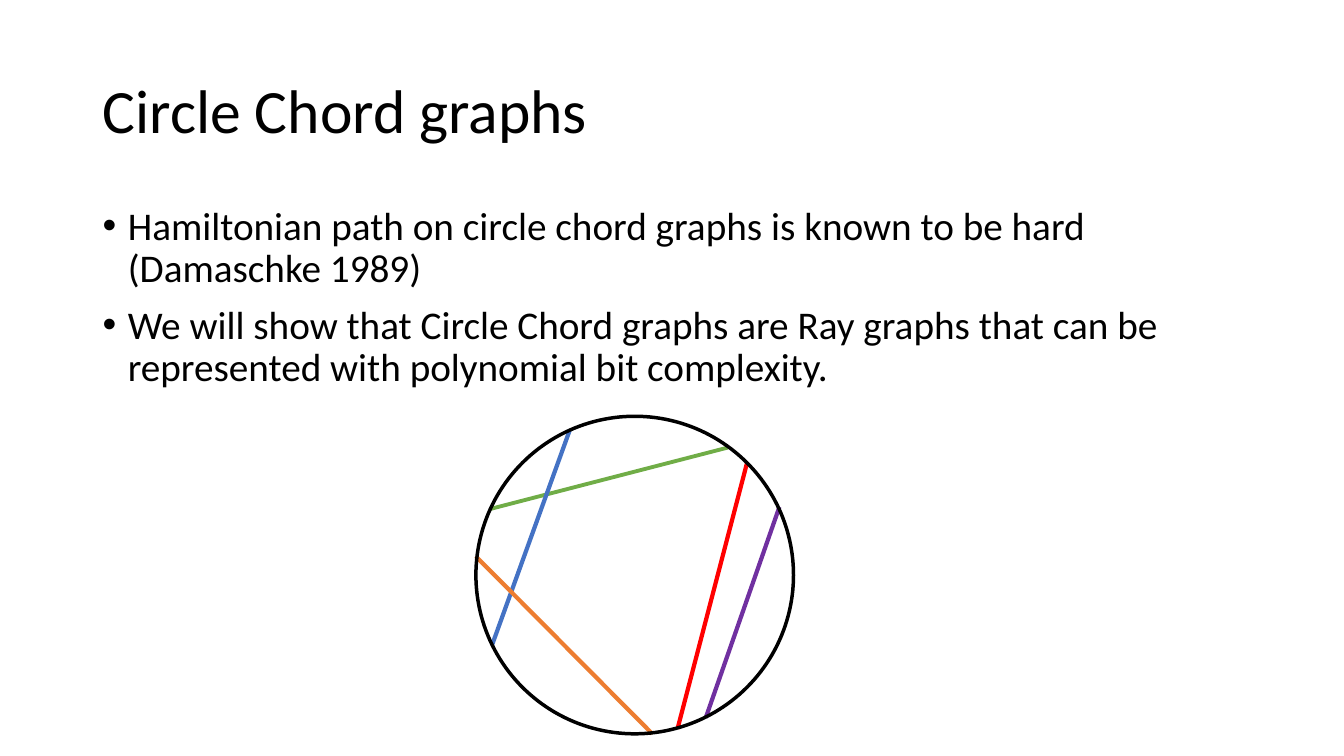
from lxml import etree
from pptx import Presentation
from pptx.dml.color import RGBColor
from pptx.enum.shapes import MSO_CONNECTOR, MSO_SHAPE
from pptx.enum.text import MSO_ANCHOR
from pptx.oxml.ns import qn
from pptx.util import Pt

STRAIGHT = MSO_CONNECTOR.STRAIGHT
OVAL = MSO_SHAPE.OVAL
TOP, MIDDLE = MSO_ANCHOR.TOP, MSO_ANCHOR.MIDDLE

TITLE = "Circle Chord graphs"
POINTS = [
    "Hamiltonian path on circle chord graphs is known to be hard (Damaschke 1989)",
    "We will show that Circle Chord graphs are Ray graphs that can be "
    "represented with polynomial bit complexity.",
]
CHORDS = [
    ("green", 2.75, (486, 505), (722, 444)),
    ("blue", 3, (565, 427), (488, 640)),
    ("orange", 3, (472, 552), (647, 728)),
    ("red", 3, (741, 459), (672, 723)),
    ("purple", 3, (773, 503), (700, 712)),
]
CIRCLE = (472, 413, 315, 315)
TITLE_BOX = (92, 40, 1150, 145)
BODY_BOX = (92, 200, 1150, 476)
INDENT = 25

THEME = {
    "font": "Calibri",
    "title": 44,
    "body": 28,
    "outline": 2.5,
    "black": "000000",
    "green": "70AD47",
    "blue": "4472C4",
    "orange": "ED7D31",
    "red": "FF0000",
    "purple": "7030A0",
}
EMU_PER_PX = 9144


def px(*values):
    return [v * EMU_PER_PX for v in values]


def color(name):
    return RGBColor.from_string(THEME[name])


def add_bullet(p):
    pPr = p._p.get_or_add_pPr()
    indent = INDENT * EMU_PER_PX
    pPr.set("marL", str(indent))
    pPr.set("indent", str(-indent))
    etree.SubElement(pPr, qn("a:buFont")).set("typeface", "Arial")
    etree.SubElement(pPr, qn("a:buChar")).set("char", "•")


def add_text(slide, box, lines, size, anchor=TOP, bullets=False, gap=0):
    tf = slide.shapes.add_textbox(*px(*box)).text_frame
    tf.word_wrap = True
    tf.vertical_anchor = anchor
    for i, line in enumerate(lines):
        p = tf.add_paragraph() if i else tf.paragraphs[0]
        p.line_spacing = 0.9
        if i:
            p.space_before = Pt(gap)
        if bullets:
            add_bullet(p)
        r = p.add_run()
        r.text = line
        r.font.name = THEME["font"]
        r.font.size = Pt(THEME[size])
        r.font.color.rgb = color("black")


def add_chord(slide, name, width, start, end):
    sp = slide.shapes.add_connector(STRAIGHT, *px(*start, *end))
    sp.line.color.rgb = color(name)
    sp.line.width = Pt(width)
    etree.SubElement(sp._element.spPr, qn("a:effectLst"))


def add_circle(slide):
    sp = slide.shapes.add_shape(OVAL, *px(*CIRCLE))
    sp.shadow.inherit = False
    sp.fill.background()
    sp.line.color.rgb = color("black")
    sp.line.width = Pt(THEME["outline"])


def main():
    prs = Presentation()
    prs.slide_width, prs.slide_height = px(1333, 750)
    slide = prs.slides.add_slide(prs.slide_layouts[6])
    add_text(slide, TITLE_BOX, [TITLE], "title", anchor=MIDDLE)
    for chord in CHORDS:
        add_chord(slide, *chord)
    add_circle(slide)
    add_text(slide, BODY_BOX, POINTS, "body", bullets=True, gap=10)
    prs.save("out.pptx")


if __name__ == "__main__":
    main()
